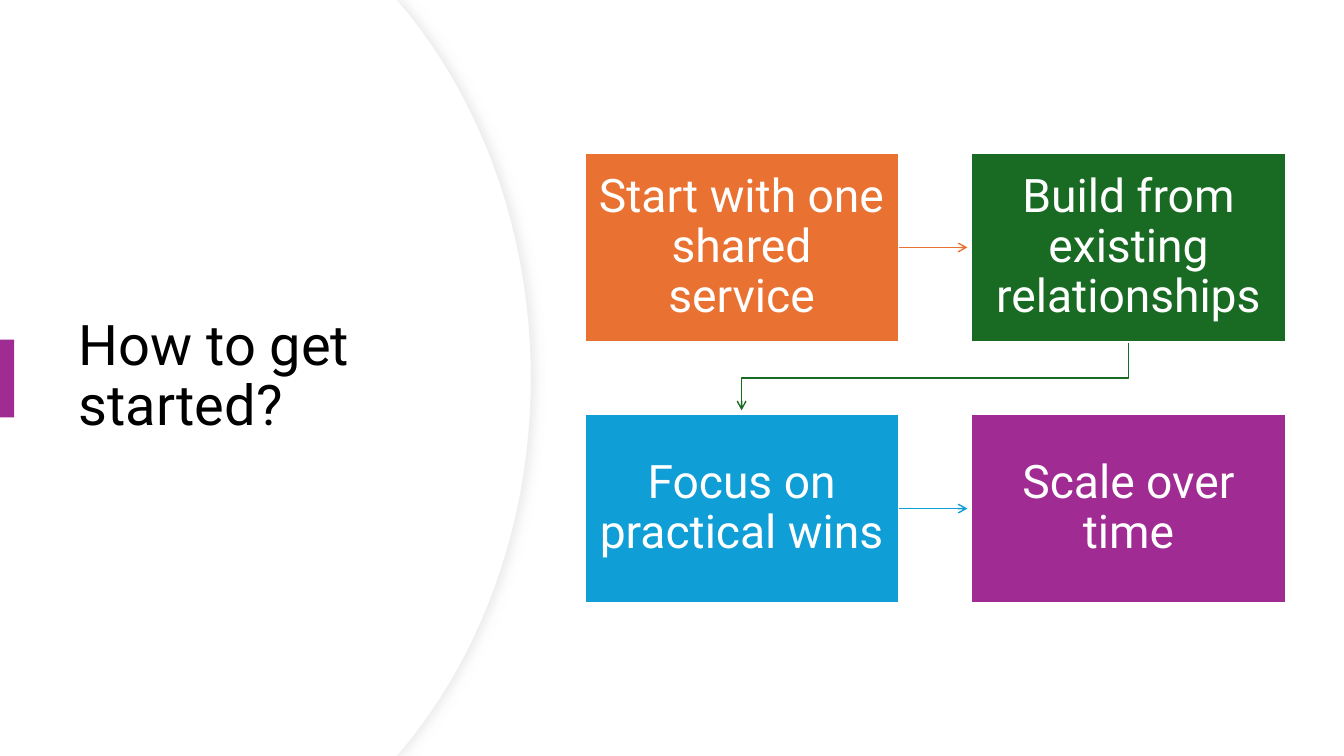
from dataclasses import dataclass

from lxml.etree import SubElement
from pptx import Presentation
from pptx.dml.color import RGBColor
from pptx.enum.shapes import MSO_CONNECTOR, MSO_SHAPE
from pptx.enum.text import MSO_ANCHOR, MSO_AUTO_SIZE, PP_ALIGN
from pptx.oxml.ns import qn
from pptx.util import Cm, Pt


@dataclass(frozen=True)
class Theme:
    font: str = "Roboto"
    title_size: int = 40
    card_size: int = 33
    white: str = "FFFFFF"
    black: str = "000000"
    panel_edge: str = "EFEFEF"
    panel_shadow: str = "D9D9D9"
    orange: str = "E97132"
    green: str = "196B24"
    blue: str = "0F9ED5"
    purple: str = "A02B93"


SLIDE_WIDTH, SLIDE_HEIGHT = 33.87, 19.05
CARD_LEFT, CARD_TOP = 14.73, 3.86
CARD_WIDTH, CARD_HEIGHT = 7.92, 4.75
COLUMN_STEP, ROW_STEP = 9.75, 6.58
ARROW_GAP = 0.1


def curve_points(start, first, second, end, steps=24):
    for step in range(1, steps + 1):
        t = step / steps
        weights = ((1 - t) ** 3, 3 * t * (1 - t) ** 2, 3 * t * t * (1 - t), t ** 3)
        yield tuple(
            sum(weight * value for weight, value in zip(weights, values))
            for values in zip(start, first, second, end)
        )


class SlideBuilder:
    def __init__(self, slide, theme):
        self.slide = slide
        self.theme = theme

    def paint(self, shape, fill=None, line=None, width=1):
        shape.shadow.inherit = False
        if fill:
            shape.fill.solid()
            shape.fill.fore_color.rgb = RGBColor.from_string(fill)
        else:
            shape.fill.background()
        if line:
            shape.line.color.rgb = RGBColor.from_string(line)
            shape.line.width = Pt(width)
        else:
            shape.line.fill.background()

    def set_text(self, shape, text, size, color, alignment):
        frame = shape.text_frame
        frame.text = text
        frame.word_wrap = True
        frame.auto_size = MSO_AUTO_SIZE.NONE
        frame.vertical_anchor = MSO_ANCHOR.MIDDLE
        paragraph = frame.paragraphs[0]
        paragraph.alignment = alignment
        paragraph.line_spacing = 0.9
        for run in paragraph.runs:
            run.font.name = self.theme.font
            run.font.size = Pt(size)
            run.font.color.rgb = RGBColor.from_string(color)

    def outline(self, points, close):
        (left, top), *others = [(Cm(x), Cm(y)) for x, y in points]
        builder = self.slide.shapes.build_freeform(left, top)
        builder.add_line_segments(others, close=close)
        return builder.convert_to_shape()

    def panel(self, right, line=None):
        middle = SLIDE_HEIGHT / 2
        bend = right - 3.2
        upper = [(0, 0), (10, 0), (bend, 0.2)]
        upper += curve_points((bend, 0.2), (right - 1.22, 2.6), (right, 5.9), (right, middle))
        lower = [(x, SLIDE_HEIGHT - y) for x, y in reversed(upper[:-1])]
        shape = self.outline(upper + lower, close=True)
        self.paint(shape, self.theme.white, line, 0.75)
        return shape

    def soft_shadow(self, shape, color):
        effects = shape.element.spPr.find(qn("a:effectLst"))
        shadow = SubElement(effects, qn("a:outerShdw"), blurRad=str(Pt(7)),
                            dist=str(Pt(3)), dir="0", algn="l", rotWithShape="0")
        tone = SubElement(shadow, qn("a:srgbClr"), val=color)
        SubElement(tone, qn("a:alpha"), val="50000")

    def title(self, text, left, top, width, height):
        shape = self.slide.shapes.title
        shape.element.getparent().append(shape.element)
        shape.left, shape.top, shape.width, shape.height = map(Cm, (left, top, width, height))
        self.set_text(shape, text, self.theme.title_size, self.theme.black, PP_ALIGN.LEFT)

    def rectangle(self, left, top, width, height, fill, line=None):
        shape = self.slide.shapes.add_shape(
            MSO_SHAPE.RECTANGLE, Cm(left), Cm(top), Cm(width), Cm(height))
        self.paint(shape, fill, line, 1.5)
        return shape

    def card(self, text, column, row, fill):
        shape = self.rectangle(CARD_LEFT + column * COLUMN_STEP, CARD_TOP + row * ROW_STEP,
                               CARD_WIDTH, CARD_HEIGHT, fill, self.theme.white)
        frame = shape.text_frame
        frame.margin_left = frame.margin_right = Cm(0.36)
        frame.margin_top = frame.margin_bottom = Cm(0.4)
        self.set_text(shape, text, self.theme.card_size, self.theme.white, PP_ALIGN.CENTER)
        return shape

    def arrowhead(self, shape):
        SubElement(shape.element.spPr.find(qn("a:ln")), qn("a:tailEnd"), type="arrow")

    def arrow_between(self, source, target, color):
        middle = source.top + source.height // 2
        connector = self.slide.shapes.add_connector(
            MSO_CONNECTOR.STRAIGHT, source.left + source.width, middle,
            target.left - Cm(ARROW_GAP), middle)
        connector.begin_connect(source, 3)
        connector.line.color.rgb = RGBColor.from_string(color)
        connector.line.width = Pt(1)
        SubElement(connector.element.spPr, qn("a:effectLst"))
        self.arrowhead(connector)

    def return_arrow(self, color):
        left = CARD_LEFT + CARD_WIDTH / 2
        right = left + COLUMN_STEP
        start = CARD_TOP + CARD_HEIGHT
        end = CARD_TOP + ROW_STEP
        turn = (start + end) / 2
        points = [(right, start + 0.03), (right, turn), (left, turn), (left, end - ARROW_GAP)]
        shape = self.outline(points, close=False)
        self.paint(shape, line=color)
        self.arrowhead(shape)


def main():
    presentation = Presentation()
    presentation.slide_width = Cm(SLIDE_WIDTH)
    presentation.slide_height = Cm(SLIDE_HEIGHT)
    theme = Theme()
    builder = SlideBuilder(presentation.slides.add_slide(presentation.slide_layouts[5]), theme)

    edge_panel = builder.panel(13.39, theme.panel_edge)
    builder.soft_shadow(edge_panel, theme.panel_shadow)
    builder.panel(13.36)
    builder.title("How to get started?", 1.73, 3.23, 10, 12.57)
    builder.rectangle(0, 8.56, 0.36, 1.96, theme.purple)

    steps = [
        ("Start with one shared service", theme.orange),
        ("Build from existing relationships", theme.green),
        ("Focus on practical wins", theme.blue),
        ("Scale over time", theme.purple),
    ]
    cards = [
        builder.card(text, index % 2, index // 2, color)
        for index, (text, color) in enumerate(steps)
    ]
    for index in (0, 2):
        builder.arrow_between(cards[index], cards[index + 1], steps[index][1])
    builder.return_arrow(theme.green)

    presentation.save("out.pptx")


if __name__ == "__main__":
    main()
